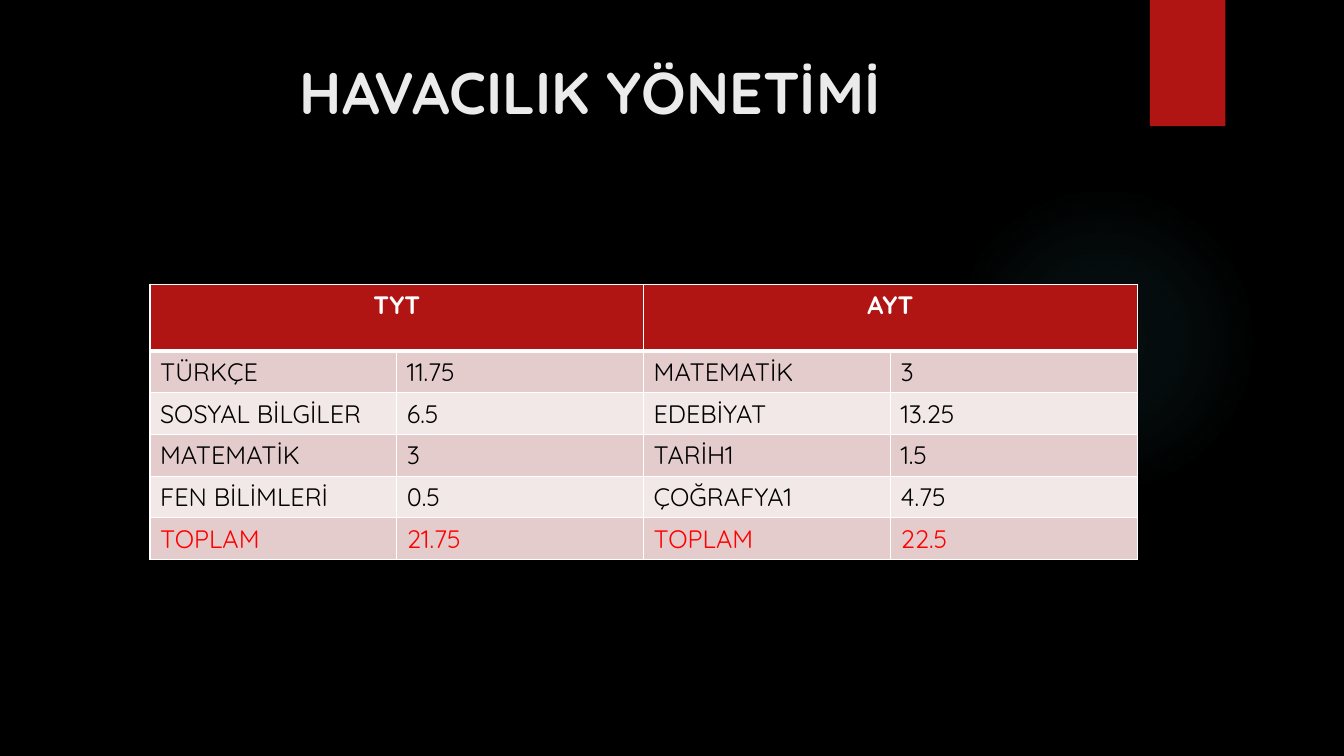
from pptx import Presentation
from pptx.dml import color
from pptx.enum import shapes, text
from pptx.oxml import ns, parse_xml
from pptx.util import Cm, Pt

FONT = "Quicksand"
RED, WHITE, BLACK = "B01513", "FFFFFF", "000000"
HEADINGS = ["TYT", "AYT"]
SCORES = [
    ["TÜRKÇE", "11.75", "MATEMATİK", "3"],
    ["SOSYAL BİLGİLER", "6.5", "EDEBİYAT", "13.25"],
    ["MATEMATİK", "3", "TARİH1", "1.5"],
    ["FEN BİLİMLERİ", "0.5", "ÇOĞRAFYA1", "4.75"],
    ["TOPLAM", "21.75", "TOPLAM", "22.5"],
]


def rgb(value):
    """Return the colour for a hex string."""
    return color.RGBColor.from_string(value)


def paint(fill, value):
    """Give a fill one solid colour."""
    fill.solid()
    fill.fore_color.rgb = rgb(value)


def write(frame, words, size, value, bold=False, align=text.PP_ALIGN.LEFT):
    """Write one formatted paragraph into a text frame."""
    paragraph = frame.paragraphs[0]
    paragraph.alignment = align
    run = paragraph.add_run()
    run.text = words
    for name, setting in {"name": FONT, "size": Pt(size), "bold": bold}.items():
        setattr(run.font, name, setting)
    run.font.color.rgb = rgb(value)


def add_block(slide, kind, left, top, width, height):
    """Add a preset shape without line or shadow."""
    shape = slide.shapes.add_shape(kind, Cm(left), Cm(top), Cm(width), Cm(height))
    shape.shadow.inherit = False
    shape.line.fill.background()
    return shape


def add_glow(slide):
    """Add the faint round glow behind the table."""
    shape = add_block(slide, shapes.MSO_SHAPE.OVAL, 23.9, 4.65, 7.82, 7.82)
    shape.fill.background()
    stops = "".join(
        f'<a:gs pos="{place * 1000}"><a:srgbClr val="50B9C1">'
        f'<a:alpha val="{alpha * 1000}"/></a:srgbClr></a:gs>'
        for place, alpha in [(0, 7), (36, 6), (69, 0)]
    )
    gradient = parse_xml(
        f'<a:gradFill {ns.nsdecls("a")}><a:gsLst>{stops}</a:gsLst><a:path path="circle">'
        '<a:fillToRect l="50000" t="50000" r="50000" b="50000"/></a:path></a:gradFill>'
    )
    properties = shape.element.spPr
    properties.replace(properties.find(ns.qn("a:noFill")), gradient)


def add_title(slide, words):
    """Add the centred slide title."""
    frame = slide.shapes.add_textbox(Cm(1.8), Cm(1.27), Cm(26.14), Cm(3.89)).text_frame
    frame.word_wrap = True
    write(frame, words, 42, "EBEBEB", True, text.PP_ALIGN.CENTER)


def style_cell(cell, fill, top=1, bottom=1):
    """Set the fill and white borders of a cell."""
    properties = cell._tc.get_or_add_tcPr()
    for side, width in {"L": 1, "R": 1, "T": top, "B": bottom}.items():
        properties.append(parse_xml(
            f'<a:ln{side} {ns.nsdecls("a")} w="{Pt(width)}"><a:solidFill>'
            f'<a:srgbClr val="{WHITE}"/></a:solidFill></a:ln{side}>'
        ))
    paint(cell.fill, fill)


def add_scores(slide):
    """Add the table of scores for both exams."""
    table = slide.shapes.add_table(
        len(SCORES) + 1, 4, Cm(3.78), Cm(7.16), Cm(24.88), Cm(6.94)
    ).table
    table.first_row = table.horz_banding = False
    for column in table.columns:
        column.width = Cm(6.22)
    for index, row in enumerate(table.rows):
        row.height = Cm(1.05 if index else 1.69)
    for column in range(4):
        style_cell(table.cell(0, column), RED, bottom=3)
    for index, heading in enumerate(HEADINGS):
        cell = table.cell(0, 2 * index)
        cell.merge(table.cell(0, 2 * index + 1))
        write(cell.text_frame, heading, 18, WHITE, True, text.PP_ALIGN.CENTER)
    for index, scores in enumerate(SCORES, 1):
        value = "FF0000" if scores[0] == "TOPLAM" else BLACK
        for column, words in enumerate(scores):
            cell = table.cell(index, column)
            style_cell(cell, "E4CCCC" if index % 2 else "F2E8E7", top=3 if index == 1 else 1)
            write(cell.text_frame, words, 18, value)


def main():
    """Build and save the slide."""
    presentation = Presentation()
    presentation.slide_width, presentation.slide_height = Cm(33.87), Cm(19.05)
    slide = presentation.slides.add_slide(presentation.slide_layouts[6])
    paint(slide.background.fill, BLACK)
    add_glow(slide)
    ribbon = add_block(slide, shapes.MSO_SHAPE.RECTANGLE, 28.98, 0, 1.9, 3.18)
    paint(ribbon.fill, RED)
    add_title(slide, "HAVACILIK YÖNETİMİ")
    add_scores(slide)
    presentation.save("out.pptx")


if __name__ == "__main__":
    main()
